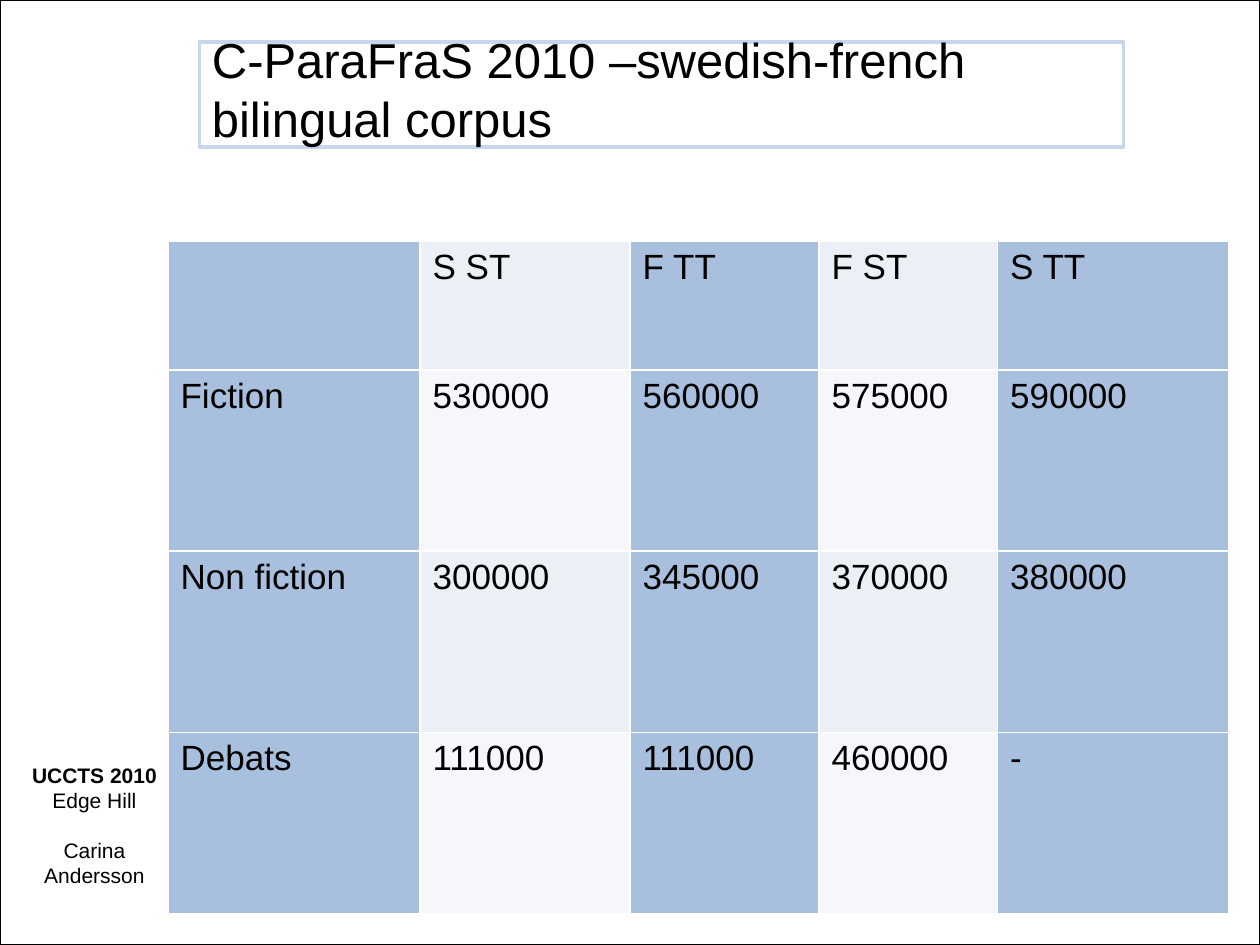
import pptx
import pptx.dml.color
import pptx.enum.shapes
import pptx.enum.text
import pptx.oxml
import pptx.oxml.ns
import pptx.util

ANCHOR = pptx.enum.text.MSO_ANCHOR
ALIGN = pptx.enum.text.PP_ALIGN
GRID_COLUMNS, GRID_ROWS = 120, 90

BLACK, WHITE, PALE_BLUE = "000000", "FFFFFF", "C6D6EC"
BLUE, LIGHT, LIGHTER = "A8BFDE", "EBF0F7", "F5F7FB"


def color(value):
    return pptx.dml.color.RGBColor.from_string(value)


class CorpusDeck:
    """Holds the style and the current slide; places are in grid units."""

    font_name = "Arial"

    def __init__(self, width, height):
        self.deck = pptx.Presentation()
        self.deck.slide_width = pptx.util.Inches(width)
        self.deck.slide_height = pptx.util.Inches(height)
        self.slide = self.deck.slides.add_slide(self.deck.slide_layouts[6])

    def x(self, columns):
        return round(self.deck.slide_width * columns / GRID_COLUMNS)

    def y(self, rows):
        return round(self.deck.slide_height * rows / GRID_ROWS)

    def place(self, left, top, width, height):
        return self.x(left), self.y(top), self.x(width), self.y(height)

    def outline(self, line, value, width):
        line.color.rgb = color(value)
        line.width = pptx.util.Pt(width)

    def fill_paragraph(self, paragraph, text, size, bold=False, **spacing):
        for name, value in spacing.items():
            setattr(paragraph, name, value)
        run = paragraph.add_run()
        run.text = text
        style = {"name": self.font_name, "size": pptx.util.Pt(size), "bold": bold}
        for name, value in style.items():
            setattr(run.font, name, value)
        run.font.color.rgb = color(BLACK)

    def frame(self, *area, line=BLACK, width=0.75):
        frame = self.slide.shapes.add_shape(
            pptx.enum.shapes.MSO_SHAPE.RECTANGLE, *self.place(*area))
        frame.shadow.inherit = False
        frame.fill.background()
        self.outline(frame.line, line, width)

    def text(self, *area, lines, line=None, **frame_format):
        box = self.slide.shapes.add_textbox(*self.place(*area))
        if line:
            self.outline(box.line, line, 2.25)
        for name, value in {"word_wrap": True, **frame_format}.items():
            setattr(box.text_frame, name, value)
        for index, content in enumerate(lines):
            paragraph = (box.text_frame.add_paragraph() if index
                         else box.text_frame.paragraphs[0])
            self.fill_paragraph(paragraph, **content)

    def cell_borders(self, cell, value, width):
        properties = cell._tc.get_or_add_tcPr()
        for position, side in enumerate(("lnL", "lnR", "lnT", "lnB")):
            border = pptx.oxml.parse_xml(
                f'<a:{side} {pptx.oxml.ns.nsdecls("a")} w="{pptx.util.Pt(width)}">'
                f'<a:solidFill><a:srgbClr val="{value}"/></a:solidFill></a:{side}>')
            properties.insert(position, border)

    def table(self, left, top, widths, heights, rows):
        area = self.place(left, top, sum(widths), sum(heights))
        table = self.slide.shapes.add_table(len(rows), len(widths), *area).table
        for column, width in zip(table.columns, widths):
            column.width = self.x(width)
        for row, height in zip(table.rows, heights):
            row.height = self.y(height)
        for r, values in enumerate(rows):
            for c, value in enumerate(values):
                cell = table.cell(r, c)
                # Columns alternate; the light ones also alternate by row
                fill = BLUE if c % 2 == 0 else (LIGHT, LIGHTER)[r % 2]
                cell.fill.solid()
                cell.fill.fore_color.rgb = color(fill)
                self.cell_borders(cell, WHITE, 1)
                if value:
                    self.fill_paragraph(cell.text_frame.paragraphs[0], value, 20,
                                        space_after=pptx.util.Pt(30))


def main():
    corpus = CorpusDeck(10, 7.5)

    # Slide border
    corpus.frame(0, 0, GRID_COLUMNS, GRID_ROWS)

    # Title
    corpus.text(19, 4, 88, 10, line=PALE_BLUE,
                vertical_anchor=ANCHOR.BOTTOM, margin_bottom=0,
                lines=[{"text": "C-ParaFraS 2010 –swedish-french bilingual corpus",
                        "size": 28}])

    # Conference and speaker
    centered = {"size": 12, "alignment": ALIGN.CENTER}
    corpus.text(0, 72, 18, 16, lines=[
        {"text": "UCCTS 2010", "bold": True, **centered},
        {"text": "Edge Hill", **centered},
        {"text": "Carina Andersson", "space_before": pptx.util.Pt(14), **centered},
    ])

    # Corpus sizes
    corpus.table(16, 23, widths=[24, 20, 18, 17, 22],
                 heights=[12.25, 17.25, 17.25, 17.25],
                 rows=[["", "S ST", "F TT", "F ST", "S TT"],
                       ["Fiction", "530000", "560000", "575000", "590000"],
                       ["Non fiction", "300000", "345000", "370000", "380000"],
                       ["Debats", "111000", "111000", "460000", "-"]])

    corpus.deck.save("out.pptx")


if __name__ == "__main__":
    main()
